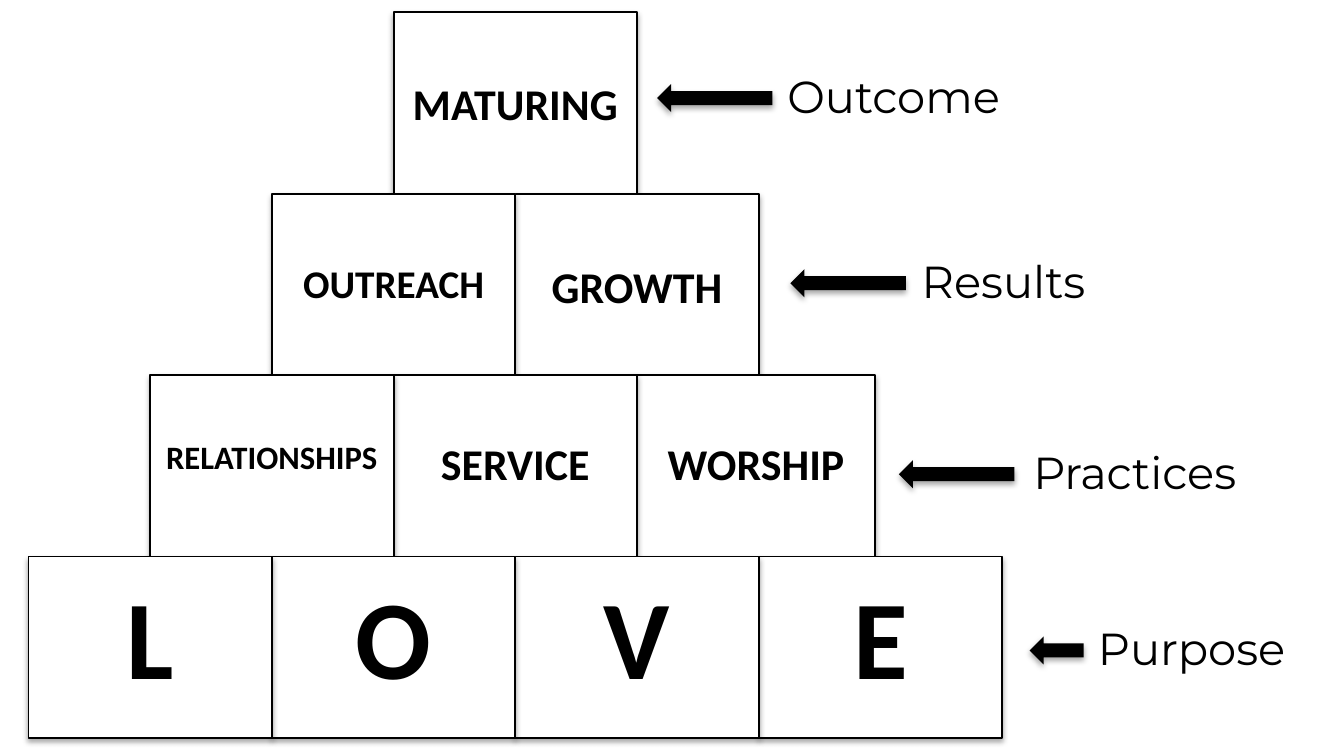
from lxml import etree
from pptx import Presentation
from pptx.dml.color import RGBColor
from pptx.enum.shapes import MSO_SHAPE
from pptx.enum.text import MSO_AUTO_SIZE, PP_ALIGN
from pptx.oxml.ns import qn
from pptx.util import Cm, Pt

RECT, ARROW = MSO_SHAPE.RECTANGLE, MSO_SHAPE.LEFT_ARROW
LEFT, CENTER = PP_ALIGN.LEFT, PP_ALIGN.CENTER
GROW = MSO_AUTO_SIZE.SHAPE_TO_FIT_TEXT

THEME = {
    "ink": RGBColor(0, 0, 0),
    "paper": RGBColor(255, 255, 255),
    "block_font": "Calibri",
    "label_font": "Montserrat",
    "letter": 60, "word": 23.5, "medium": 21, "small": 17.5, "label": 24,
}
TEXT_HEIGHT = {"letter": 2.82, "word": 1.27, "medium": 1.14, "small": 1.02, "label": 1.27}

ROWS = [
    {"text_drop": 1.09, "blocks": [("MATURING", "word")]},
    {"text_drop": 1.12, "blocks": [("OUTREACH", "medium"), ("GROWTH", "word")]},
    {"text_drop": 1.04, "blocks": [("RELATIONSHIPS", "small"), ("SERVICE", "word"),
                                   ("WORSHIP", "word")]},
    {"text_drop": 0.08, "blocks": [(letter, "letter") for letter in "LOVE"]},
]
LABELS = [
    {"text": "Outcome", "left": 14.63, "top": 1.17, "arrow_left": 12.42, "arrow_width": 2.18},
    {"text": "Results", "left": 17.17, "top": 4.67, "arrow_left": 14.94, "arrow_width": 2.18},
    {"text": "Practices", "left": 19.28, "top": 8.28, "arrow_left": 16.99, "arrow_width": 2.18},
    {"text": "Purpose", "left": 20.5, "top": 11.61, "arrow_left": 19.46, "arrow_width": 1.02},
]
BLOCK_W, BLOCK_H = 4.6, 3.43
PYRAMID_CENTER, PYRAMID_TOP = 9.74, 0.23
OVERLAP = {"WORSHIP": 0.1, "RELATIONSHIPS": 0}
LABEL_W, ARROW_H, ARROW_DROP = 5.16, 0.53, 0.42


def add_shadow(sp):
    effects = etree.SubElement(sp._element.spPr, qn("a:effectLst"))
    shadow = etree.SubElement(effects, qn("a:outerShdw"), blurRad=str(Pt(3.1)),
                              dist=str(Pt(1.8)), dir="5400000", rotWithShape="0")
    color = etree.SubElement(shadow, qn("a:srgbClr"), val=str(THEME["ink"]))
    etree.SubElement(color, qn("a:alpha"), val="35000")


def add_solid(s, kind, left, top, width, height, fill, outlined=False):
    sp = s.shapes.add_shape(kind, Cm(left), Cm(top), Cm(width), Cm(height))
    sp.fill.solid()
    sp.fill.fore_color.rgb = fill
    if outlined:
        sp.line.color.rgb = THEME["ink"]
        sp.line.width = Pt(1)
    else:
        sp.line.fill.background()
    add_shadow(sp)


def add_text(s, text, left, top, width, size, font, bold=False, align=LEFT):
    sp = s.shapes.add_textbox(Cm(left), Cm(top), Cm(width), Cm(TEXT_HEIGHT[size]))
    tf = sp.text_frame
    tf.word_wrap = True
    tf.auto_size = GROW
    p = tf.paragraphs[0]
    p.alignment = align
    r = p.add_run()
    r.text = text
    r.font.name = font
    r.font.size = Pt(THEME[size])
    r.font.bold = bold
    r.font.color.rgb = THEME["ink"]


def add_row(s, index, row):
    blocks = row["blocks"]
    top = PYRAMID_TOP + index * BLOCK_H
    start = PYRAMID_CENTER - len(blocks) * BLOCK_W / 2
    placed = [(start + i * BLOCK_W, text, size) for i, (text, size) in enumerate(blocks)]
    for left, text, size in reversed(placed):
        add_solid(s, RECT, left - OVERLAP.get(text, 0), top, BLOCK_W, BLOCK_H,
                  THEME["paper"], outlined=True)
    for left, text, size in placed:
        add_text(s, text, left, top + row["text_drop"], BLOCK_W - OVERLAP.get(text, 0),
                 size, THEME["block_font"], bold=True, align=CENTER)


def add_label(s, label):
    add_solid(s, ARROW, label["arrow_left"], label["top"] + ARROW_DROP,
              label["arrow_width"], ARROW_H, THEME["ink"])
    add_text(s, label["text"], label["left"], label["top"], LABEL_W, "label",
             THEME["label_font"])


def main():
    prs = Presentation()
    prs.slide_width, prs.slide_height = Cm(25.4), Cm(14.29)
    s = prs.slides.add_slide(prs.slide_layouts[6])
    for index, row in enumerate(ROWS):
        add_row(s, index, row)
    for label in LABELS:
        add_label(s, label)
    prs.save("out.pptx")


if __name__ == "__main__":
    main()
